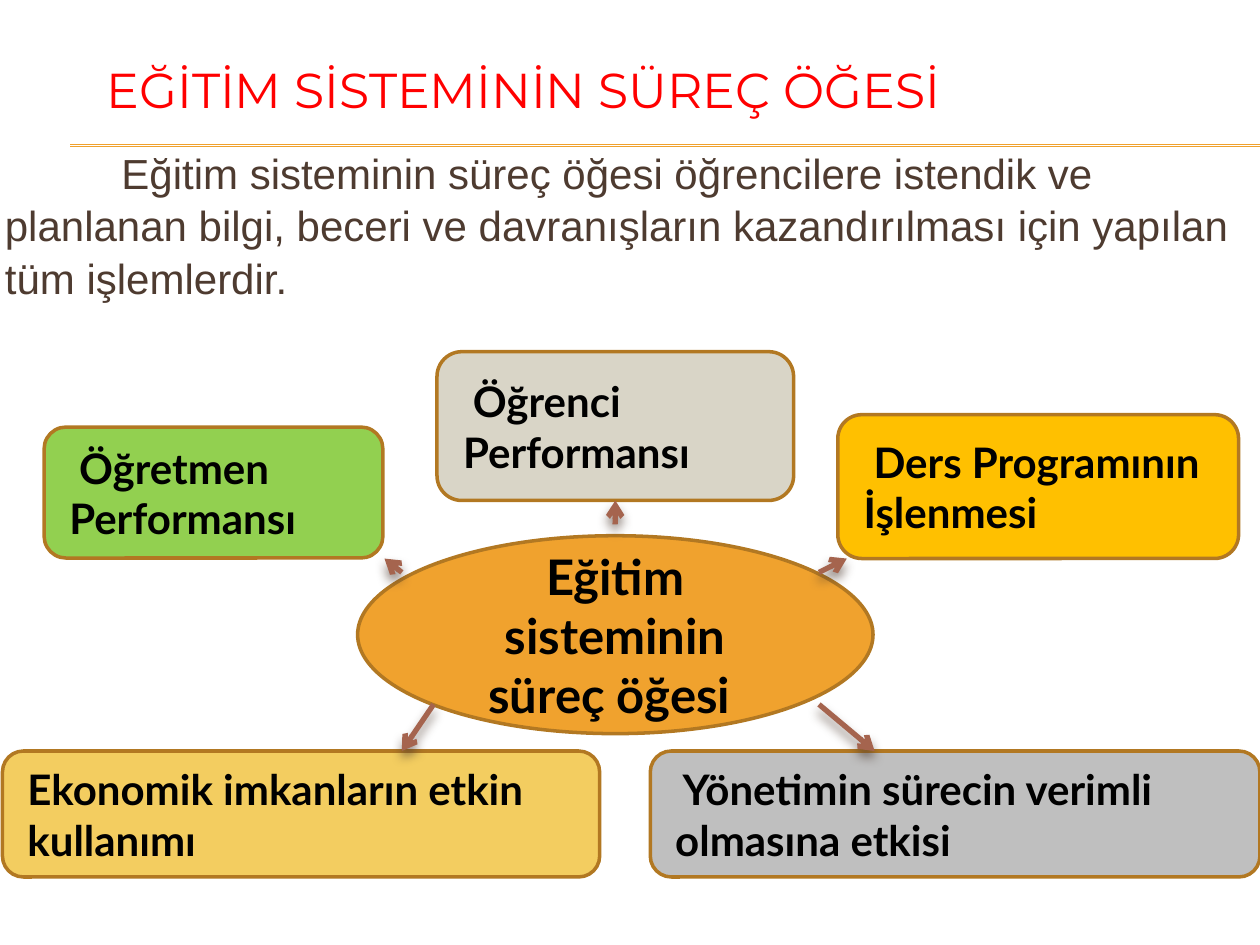
from dataclasses import dataclass

from lxml.etree import SubElement
from pptx import Presentation
from pptx.dml.color import RGBColor
from pptx.enum.shapes import MSO_CONNECTOR, MSO_SHAPE
from pptx.enum.text import MSO_ANCHOR, MSO_AUTO_SIZE, PP_ALIGN
from pptx.oxml.ns import qn
from pptx.util import Cm, Pt


@dataclass(frozen=True)
class Theme:
    title: str = "FF0000"
    body: str = "4E3B30"
    label: str = "000000"
    accent: str = "F0A22E"
    outline: str = "B27822"
    arrow: str = "A5644E"
    student: str = "D9D5C7"
    teacher: str = "92D050"
    lessons: str = "FFC000"
    economy: str = "F3CD60"
    management: str = "BFBFBF"
    title_font: str = "Montserrat"
    body_font: str = "Arial"
    label_font: str = "Lato"
    large: int = 28
    normal: int = 24


THEME = Theme()
LEFT_MARGIN = 0.13


def rgb(value):
    return RGBColor.from_string(value)


def style(paragraph, name, size, color, bold=False):
    font = paragraph.font
    font.name, font.size, font.bold = name, Pt(size), bold
    font.color.rgb = rgb(color)


def indent(paragraph, first_line):
    properties = paragraph._p.get_or_add_pPr()
    properties.set("marL", str(Cm(LEFT_MARGIN)))
    properties.set("indent", str(Cm(first_line)))


def add_line(slide, start, end, color, width):
    line = slide.shapes.add_connector(
        MSO_CONNECTOR.STRAIGHT, *(Cm(value) for value in (*start, *end)))
    line.line.color.rgb = rgb(color)
    line.line.width = Pt(width)
    effects = SubElement(line._element.spPr, qn("a:effectLst"))
    return line, effects


def add_heading(slide, left, top, width, height):
    """Title with the double rule near its lower edge."""
    for offset in (2.39, 2.42):
        add_line(slide, (left - 0.48, top + offset), (25.4, top + offset),
                 THEME.accent, 0.75)
    title = slide.shapes.title
    title.left, title.top, title.width, title.height = (
        Cm(value) for value in (left, top, width, height))
    frame = title.text_frame
    frame.text = "EĞİTİM SİSTEMİNİN SÜREÇ ÖĞESİ"
    frame.auto_size = MSO_AUTO_SIZE.NONE
    frame.vertical_anchor = MSO_ANCHOR.MIDDLE
    heading = frame.paragraphs[0]
    heading.alignment = PP_ALIGN.LEFT
    style(heading, THEME.title_font, THEME.large, THEME.title)


def add_definition(slide, *box):
    frame = slide.shapes.add_textbox(*(Cm(value) for value in box)).text_frame
    frame.word_wrap = True
    definition = frame.paragraphs[0]
    definition.text = (
        "Eğitim sisteminin süreç öğesi öğrencilere istendik ve planlanan bilgi, "
        "beceri ve davranışların kazandırılması için yapılan tüm işlemlerdir.")
    definition.line_spacing = 1.05
    indent(definition, 2.35)
    style(definition, THEME.body_font, THEME.normal, THEME.body)


def add_node(slide, preset, box, text, fill, size):
    node = slide.shapes.add_shape(preset, *(Cm(value) for value in box))
    node.shadow.inherit = False
    node.fill.solid()
    node.fill.fore_color.rgb = rgb(fill)
    node.line.color.rgb = rgb(THEME.outline)
    node.line.width = Pt(2)
    frame = node.text_frame
    frame.word_wrap = True
    frame.vertical_anchor = MSO_ANCHOR.MIDDLE
    label = frame.paragraphs[0]
    label.text = text
    style(label, THEME.label_font, size, THEME.label, bold=True)
    return node, label


def add_factor(slide, box, text, fill, first_line):
    factor, label = add_node(slide, MSO_SHAPE.ROUNDED_RECTANGLE, box, text,
                             fill, THEME.normal)
    label.alignment = PP_ALIGN.LEFT
    indent(label, first_line)
    return factor


def add_arrow(slide, start, end):
    arrow, effects = add_line(slide, start, end, THEME.arrow, 3)
    SubElement(arrow.line._get_or_add_ln(), qn("a:tailEnd"), type="arrow")
    shadow = SubElement(effects, qn("a:outerShdw"), blurRad=str(Pt(6)),
                        dist=str(Pt(4)), dir="5400000", rotWithShape="0")
    color = SubElement(shadow, qn("a:srgbClr"), val=THEME.body)
    SubElement(color, qn("a:alpha"), val="60000")
    return arrow


def add_process_map(slide, left, top):
    """Central ellipse, its five factors and an arrow to each of them."""
    def place(x, y):
        return left + x, top + y

    _, center_label = add_node(
        slide, MSO_SHAPE.OVAL, (*place(7.16, 3.71), 10.39, 3.99),
        "Eğitim sisteminin süreç öğesi ", THEME.accent, THEME.large)
    center_label.alignment = PP_ALIGN.CENTER

    factors = [
        (8.76, 0, 7.19, 3, "Öğrenci Performansı", THEME.student, 0.2),
        (0.84, 1.52, 6.83, 2.64, "Öğretmen Performansı", THEME.teacher, 0.2),
        (16.84, 1.27, 8.08, 2.9, "Ders Programının İşlenmesi", THEME.lessons, 0.2),
        (0, 8.05, 12.04, 2.54, "Ekonomik imkanların etkin kullanımı",
         THEME.economy, 0),
        (13.06, 8.05, 12.29, 2.54, "Yönetimin sürecin verimli olmasına etkisi",
         THEME.management, 0.15),
    ]
    student, *_ = [
        add_factor(slide, (*place(x, y), width, height), text, fill, first_line)
        for x, y, width, height, text, fill, first_line in factors]

    to_student = add_arrow(slide, place(12.35, 3.48), place(12.35, 3))
    to_student.end_connect(student, 2)
    for start, end in [
        ((8.05, 4.45), (7.7, 4.17)),
        ((8.69, 7.11), (8.05, 8.05)),
        ((16.46, 7.11), (17.58, 8.05)),
        ((16.46, 4.45), (17.02, 4.17)),
    ]:
        add_arrow(slide, place(*start), place(*end))


def main():
    presentation = Presentation()
    presentation.slide_width, presentation.slide_height = Cm(25.4), Cm(19.05)
    slide = presentation.slides.add_slide(presentation.slide_layouts[5])
    add_heading(slide, 1.9, 0.53, 21.34, 2.51)
    add_definition(slide, -0.28, 2.79, 25.4, 15.52)
    add_process_map(slide, 0.05, 7.09)
    presentation.save("out.pptx")


if __name__ == "__main__":
    main()
